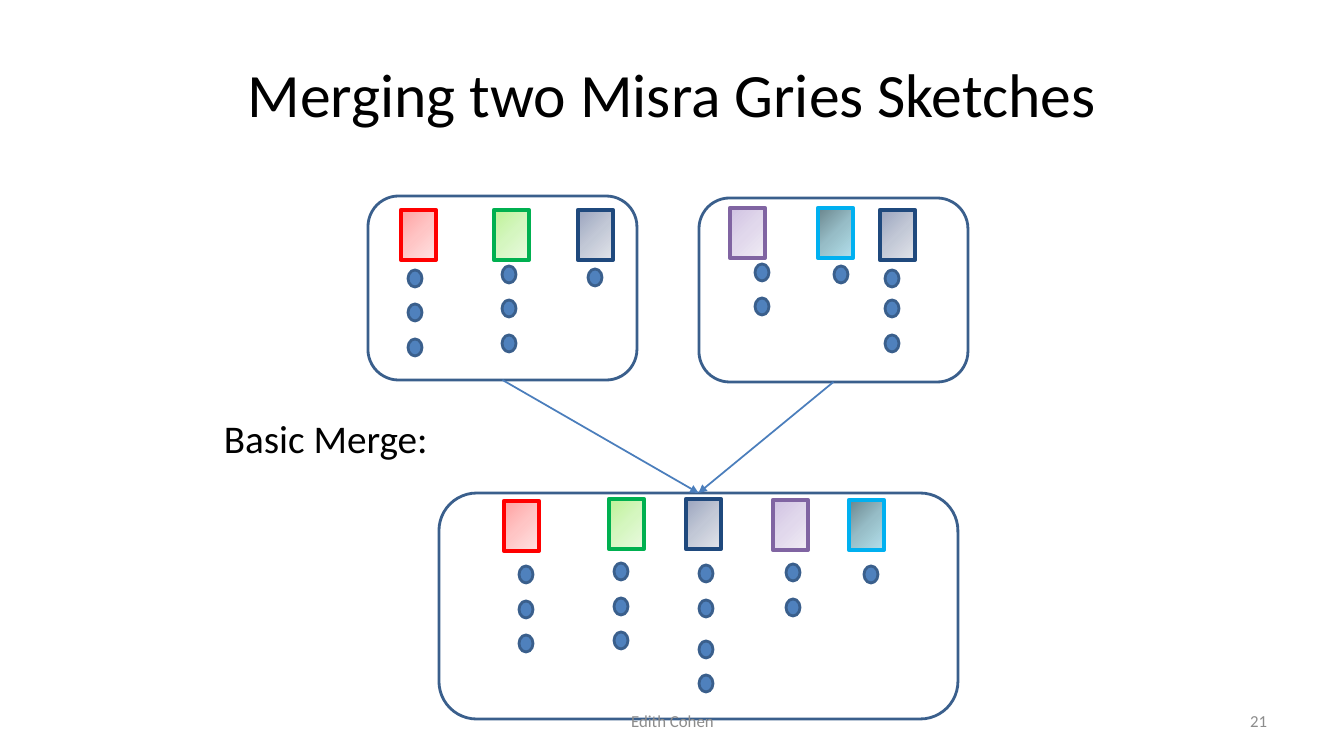
from copy import deepcopy

from pptx import Presentation
from pptx.dml.color import RGBColor
from pptx.enum.shapes import MSO_CONNECTOR, MSO_SHAPE
from pptx.enum.text import MSO_ANCHOR, PP_ALIGN
from pptx.oxml.ns import qn
from pptx.util import Emu, Pt

RECT, OVAL, ROUNDED = MSO_SHAPE.RECTANGLE, MSO_SHAPE.OVAL, MSO_SHAPE.ROUNDED_RECTANGLE
LEFT, CENTER, RIGHT = PP_ALIGN.LEFT, PP_ALIGN.CENTER, PP_ALIGN.RIGHT
TOP, MIDDLE = MSO_ANCHOR.TOP, MSO_ANCHOR.MIDDLE

# Content: lengths in px
SLIDE = (1344, 756)
TILE = (35, 50)
DOT = (14, 17)
FONT = "Calibri"
OUTLINE, DOT_FILL, ARROW = "3A5F8C", "4F81BD", "4B7EBC"

# Element: border, gradient from top left to bottom right
ELEMENTS = {
    "red": ("FF0000", ("FFA0A0", "FFC5C5", "FFE3E3")),
    "green": ("00B050", ("BEF297", "D5F6C0", "EAFAE0")),
    "navy": ("1F497D", ("9AA4BE", "C2C8D6", "E2E4EA")),
    "violet": ("8064A2", ("D0C2E2", "E1D8EC", "F0ECF5")),
    "cyan": ("00B0F0", ("6A858C", "97BDC7", "B3E0EC")),
}

# Sketch: box, then counters as (element, tile left, tile top, dot left, dot tops)
LEFT_SKETCH = ((368, 196, 269, 184), [
    ("red", 401, 210, 408, (270, 304, 339)),
    ("green", 494, 210, 502, (266, 300, 335)),
    ("navy", 578, 210, 588, (269,)),
])
RIGHT_SKETCH = ((699, 198, 269, 184), [
    ("violet", 730, 208, 755, (264, 298)),
    ("cyan", 818, 208, 834, (266,)),
    ("navy", 880, 210, 885, (270, 300, 335)),
])
MERGED_SKETCH = ((439, 493, 519, 226), [
    ("red", 504, 501, 519, (566, 601, 635)),
    ("green", 609, 499, 614, (563, 598, 632)),
    ("navy", 686, 499, 699, (565, 600, 641, 675)),
    ("violet", 773, 500, 786, (564, 599)),
    ("cyan", 849, 500, 864, (566,)),
])

# Text: wording, box, size, colour, alignment, anchor, wrap
TEXTS = [
    ("Merging two Misra Gries Sketches", (67, 30, 1210, 126), 44, "000000", CENTER, MIDDLE, True),
    ("Basic Merge:", (214, 409, 227, 57), 28, "000000", LEFT, TOP, False),
    ("21", (964, 701, 313, 40), 12, "8C8C8C", RIGHT, MIDDLE, True),
    ("Edith Cohen", (460, 701, 425, 40), 12, "8C8C8C", CENTER, MIDDLE, True),
]


def px(length):
    return Emu(round(length * 914400 / 100.8))


def color(code):
    return RGBColor.from_string(code)


def add_outlined(kind, box, border, weight):
    shape = slide.shapes.add_shape(kind, *map(px, box))
    shape.shadow.inherit = False
    shape.line.color.rgb = color(border)
    shape.line.width = Pt(weight)
    return shape


def fill_gradient(shape, shades):
    shape.fill.gradient()
    shape.fill.gradient_angle = 315
    stop_list = shape._element.spPr.find(".//" + qn("a:gsLst"))
    stop_list.insert(1, deepcopy(stop_list[0]))
    for stop, shade, position in zip(shape.fill.gradient_stops, shades, (0, 0.5, 1)):
        stop.color.rgb = color(shade)
        stop.color.brightness = 0
        stop.position = position


def add_sketch(sketch):
    box, counters = sketch
    for element, tile_left, tile_top, dot_left, dot_tops in counters:
        border, shades = ELEMENTS[element]
        fill_gradient(add_outlined(RECT, (tile_left, tile_top, *TILE), border, 3), shades)
        for dot_top in dot_tops:
            dot = add_outlined(OVAL, (dot_left, dot_top, *DOT), OUTLINE, 2)
            dot.fill.solid()
            dot.fill.fore_color.rgb = color(DOT_FILL)
    frame = add_outlined(ROUNDED, box, OUTLINE, 2)
    frame.fill.background()
    return frame


def add_arrow(source, target):
    arrow = slide.shapes.add_connector(MSO_CONNECTOR.STRAIGHT, 0, 0, 0, 0)
    arrow.begin_connect(source, 2)  # bottom centre
    arrow.end_connect(target, 0)  # top centre
    arrow.line.color.rgb = color(ARROW)
    arrow.line.width = Pt(1.25)
    line = arrow.line._get_or_add_ln()
    line.append(line.makeelement(qn("a:tailEnd"), {"type": "triangle"}))
    properties = arrow._element.spPr
    properties.append(properties.makeelement(qn("a:effectLst"), {}))


def add_text(wording, box, size, shade, alignment, anchor, wrap):
    frame = slide.shapes.add_textbox(*map(px, box)).text_frame
    frame.word_wrap = wrap
    frame.vertical_anchor = anchor
    paragraph = frame.paragraphs[0]
    paragraph.text = wording
    paragraph.alignment = alignment
    paragraph.font.name = FONT
    paragraph.font.size = Pt(size)
    paragraph.font.color.rgb = color(shade)


deck = Presentation()
deck.slide_width, deck.slide_height = map(px, SLIDE)
slide = deck.slides.add_slide(deck.slide_layouts[6])

# Sketches and the arrows that merge them
left_frame, right_frame, merged_frame = map(
    add_sketch, (LEFT_SKETCH, RIGHT_SKETCH, MERGED_SKETCH))
for source_frame in (left_frame, right_frame):
    add_arrow(source_frame, merged_frame)

# Title, label and footer
for text in TEXTS:
    add_text(*text)

deck.save("out.pptx")
